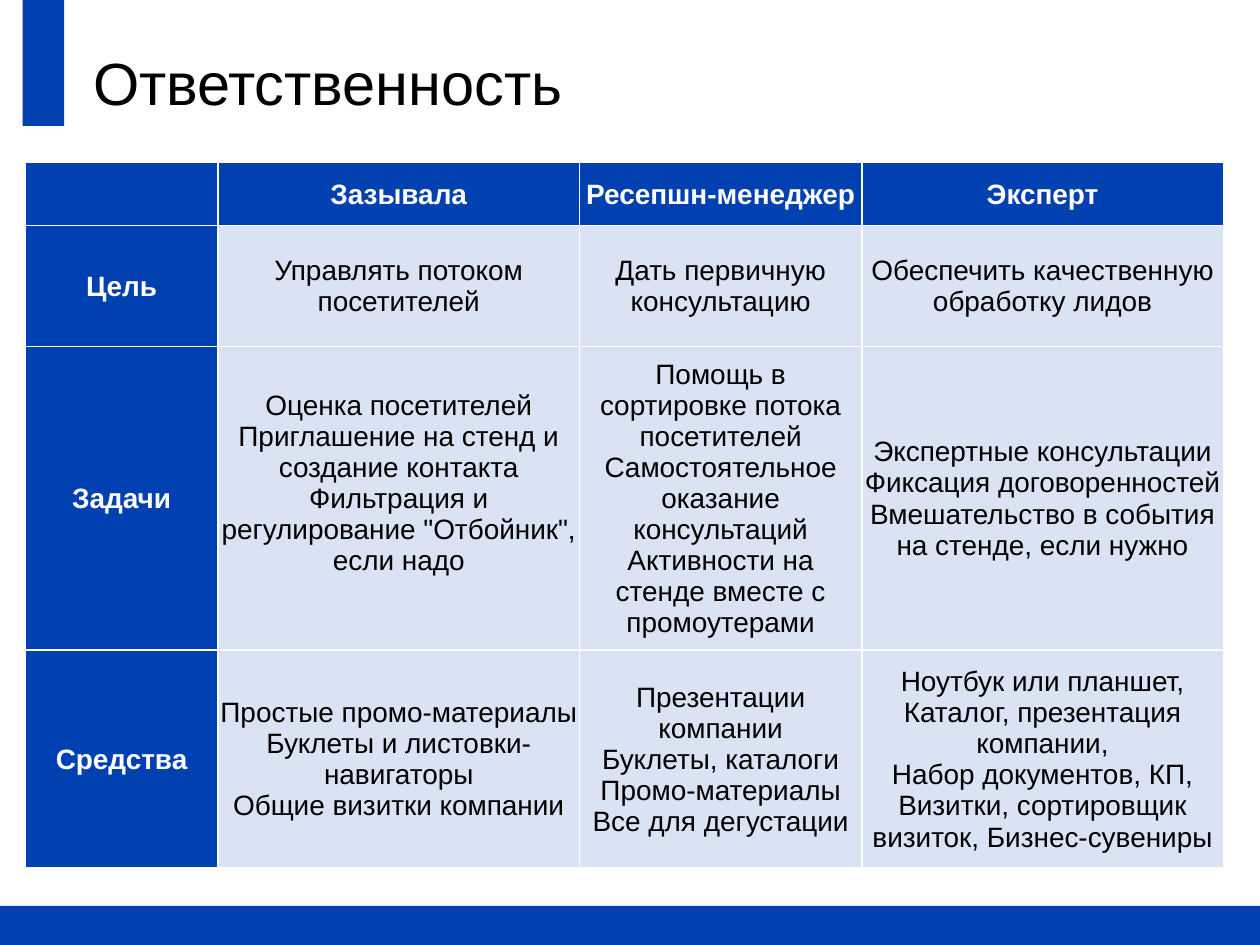
from dataclasses import dataclass

from lxml import etree
from pptx import Presentation
from pptx.dml.color import RGBColor
from pptx.enum.shapes import MSO_SHAPE
from pptx.enum.text import MSO_ANCHOR, PP_ALIGN
from pptx.oxml.ns import qn
from pptx.util import Inches, Pt

RECTANGLE = MSO_SHAPE.RECTANGLE
MIDDLE = MSO_ANCHOR.MIDDLE
CENTER = PP_ALIGN.CENTER
FONT = "Arial"
COLORS = {"blue": "0040B1", "pale": "DAE3F3", "white": "FFFFFF", "black": "000000"}


@dataclass(frozen=True)
class Box:
    left: float
    top: float
    width: float
    height: float

    def emu(self) -> tuple:
        return tuple(Inches(v) for v in (self.left, self.top, self.width, self.height))


BARS = [Box(0, 7.19, 10, 0.31), Box(0.18, 0, 0.33, 1)]
TITLE_BOX = Box(0.64, 0.3, 8.63, 0.69)
TABLE_BOX = Box(0.2, 1.29, 9.51, 5.58)
COL_WIDTHS = [1.53, 2.87, 2.24, 2.87]
ROW_HEIGHTS = [0.5, 0.96, 2.39, 1.73]
ROWS = [
    ["", "Зазывала", "Ресепшн-менеджер", "Эксперт"],
    [
        "Цель",
        "Управлять потоком посетителей",
        "Дать первичную консультацию",
        "Обеспечить качественную обработку лидов",
    ],
    [
        "Задачи",
        "Оценка посетителей Приглашение на стенд и создание контакта "
        "Фильтрация и регулирование \"Отбойник\", если надо",
        "Помощь в сортировке потока посетителей Самостоятельное\vоказание консультаций\n"
        "Активности на стенде вместе с промоутерами",
        "Экспертные консультации\n"
        "Фиксация договоренностей Вмешательство в события на стенде, если нужно",
    ],
    [
        "Средства",
        "Простые промо-материалы\vБуклеты и листовки-навигаторы\vОбщие визитки компании",
        "Презентации компании\vБуклеты, каталоги\nПромо-материалы\nВсе для дегустации",
        "Ноутбук или планшет, Каталог, презентация компании,\n"
        "Набор документов, КП, Визитки, сортировщик визиток, Бизнес-сувениры",
    ],
]
BOTTOM_MARGINS = {(2, 1): 0.25}


def rgb(name: str) -> RGBColor:
    return RGBColor.from_string(COLORS[name])


def set_font(p, size: float, color: str, bold: bool = False) -> None:
    p.font.name = FONT
    p.font.size = Pt(size)
    p.font.bold = bold
    p.font.color.rgb = rgb(color)


def add_bar(shapes, box: Box) -> None:
    sp = shapes.add_shape(RECTANGLE, *box.emu())
    sp.shadow.inherit = False
    sp.fill.solid()
    sp.fill.fore_color.rgb = rgb("blue")
    sp.line.fill.background()


def add_title(shapes, text: str) -> None:
    tf = shapes.add_textbox(*TITLE_BOX.emu()).text_frame
    tf.word_wrap = True
    tf.vertical_anchor = MIDDLE
    p = tf.paragraphs[0]
    p.text = text
    set_font(p, 34, "black")


def set_borders(cell, color: str, width: float) -> None:
    tc_pr = cell._tc.get_or_add_tcPr()
    for i, side in enumerate(("lnL", "lnR", "lnT", "lnB")):
        ln = etree.Element(qn(f"a:{side}"), w=str(Pt(width)))
        fill = etree.SubElement(ln, qn("a:solidFill"))
        etree.SubElement(fill, qn("a:srgbClr"), val=COLORS[color])
        tc_pr.insert(i, ln)


def fill_cell(cell, text: str, heading: bool, bottom: float) -> None:
    cell.fill.solid()
    cell.fill.fore_color.rgb = rgb("blue" if heading else "pale")
    set_borders(cell, "white", 1)
    cell.vertical_anchor = MIDDLE
    cell.margin_left = cell.margin_right = cell.margin_top = Inches(0.01)
    cell.margin_bottom = Inches(bottom)
    cell.text = text
    for p in cell.text_frame.paragraphs:
        p.alignment = CENTER
        set_font(p, 16, "white" if heading else "black", heading)


def add_duties_table(shapes) -> None:
    table = shapes.add_table(len(ROWS), len(COL_WIDTHS), *TABLE_BOX.emu()).table
    for column, width in zip(table.columns, COL_WIDTHS):
        column.width = Inches(width)
    for row, height in zip(table.rows, ROW_HEIGHTS):
        row.height = Inches(height)
    for r, texts in enumerate(ROWS):
        for c, text in enumerate(texts):
            bottom = BOTTOM_MARGINS.get((r, c), 0)
            fill_cell(table.cell(r, c), text, r == 0 or c == 0, bottom)


def main() -> None:
    prs = Presentation()
    prs.slide_width, prs.slide_height = Inches(10), Inches(7.5)
    s = prs.slides.add_slide(prs.slide_layouts[6])
    for bar in BARS:
        add_bar(s.shapes, bar)
    add_title(s.shapes, "Ответственность")
    add_duties_table(s.shapes)
    prs.save("out.pptx")


if __name__ == "__main__":
    main()
